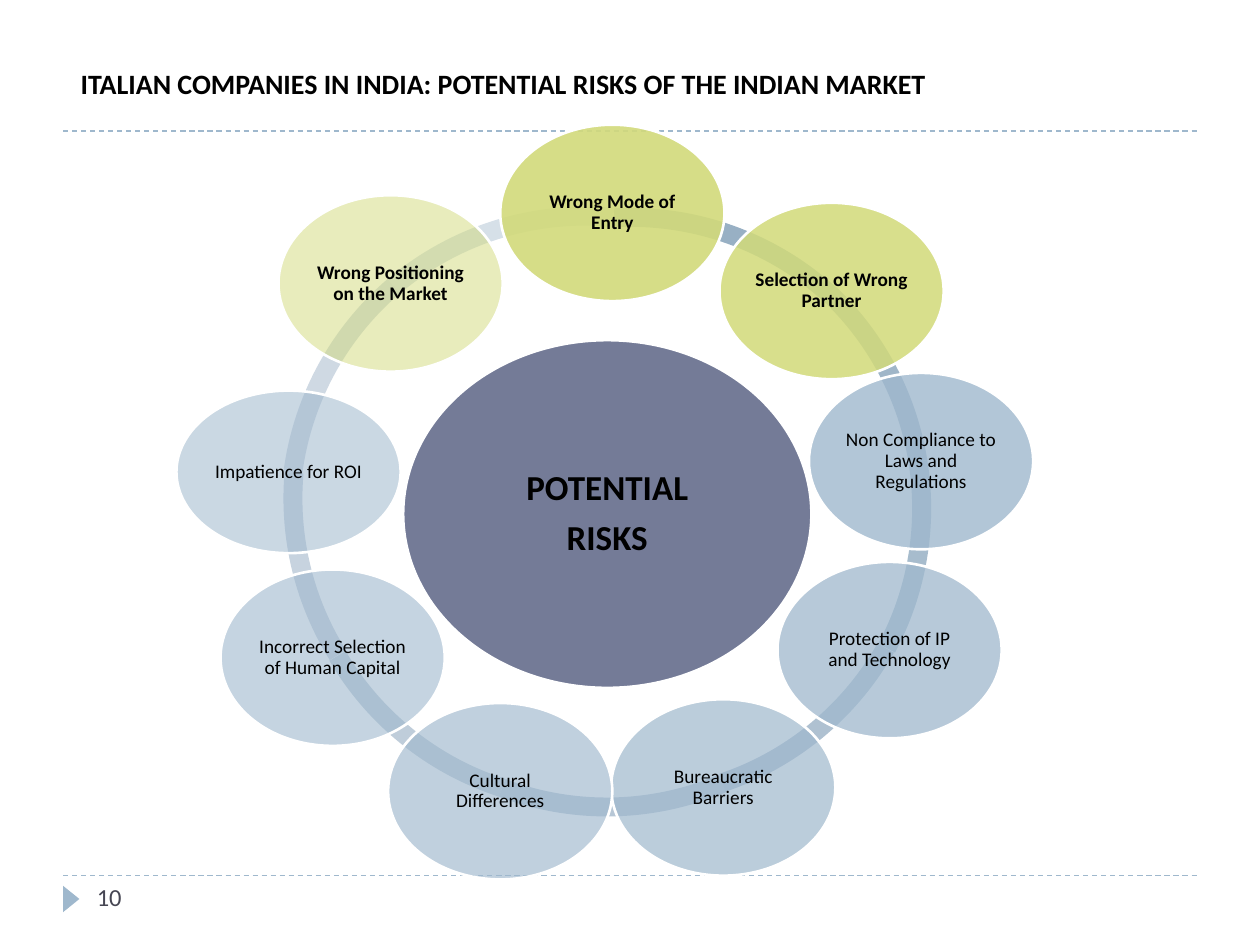
from lxml.etree import SubElement
from pptx import Presentation
from pptx.dml.color import RGBColor
from pptx.enum.dml import MSO_LINE
from pptx.enum.shapes import MSO_CONNECTOR, MSO_SHAPE
from pptx.enum.text import MSO_ANCHOR, MSO_AUTO_SIZE, PP_ALIGN
from pptx.oxml.ns import qn
from pptx.util import Inches, Pt

BLUE = RGBColor(0x9F, 0xB8, 0xCD)
LIME = RGBColor(0xD2, 0xDA, 0x7A)
SLATE = RGBColor(0x52, 0x5B, 0x7E)
GREY = RGBColor(0x46, 0x46, 0x53)
BLACK = RGBColor(0, 0, 0)
WHITE = RGBColor(0xFF, 0xFF, 0xFF)

FONT = "Calibri"
RING_SIZE, RING_THICKNESS = 4.85, 0.031
RISK_WIDTH, RISK_HEIGHT = 1.78, 1.4

# Ring pieces: left, top, start, end (adjustment units), colour
RING = [
    (2.22, 1.64, 137.83, 165.15, "D6E0E8"),
    (2.23, 1.63, 112.44, 137.64, "CFD9E3"),
    (2.25, 1.53, 88.81, 110.97, "C7D3DF"),
    (2.28, 1.59, 64.70, 89.74, "BFCDDA"),
    (2.39, 1.63, 40.18, 66.40, "B7C7D6"),
    (2.56, 1.56, 17.73, 42.86, "AFC1D1"),
    (2.54, 1.61, 210.54, 16.89, "A7BCCD"),
    (2.54, 1.61, 188.10, 210.54, "A0B6C8"),
    (2.58, 1.65, 160.08, 187.30, "98B0C4"),
]

# Risks: text, left, top, height, colour, opacity in percent
RISKS = [
    ("Wrong Mode of Entry", 3.97, 0.99, RISK_HEIGHT, LIME, 90),
    ("Selection of Wrong Partner", 5.71, 1.61, RISK_HEIGHT, LIME, 86),
    ("Non Compliance to Laws and Regulations", 6.42, 2.96, RISK_HEIGHT, BLUE, 80),
    ("Protection of IP and Technology", 6.17, 4.46, RISK_HEIGHT, BLUE, 75),
    ("Bureaucratic Barriers", 4.85, 5.55, RISK_HEIGHT, BLUE, 70),
    ("Cultural Differences", 3.08, 5.58, RISK_HEIGHT, BLUE, 65),
    ("Incorrect Selection of Human Capital", 1.75, 4.52, RISK_HEIGHT, BLUE, 60),
    ("Impatience for ROI", 1.4, 3.1, 1.29, BLUE, 55),
    ("Wrong Positioning on the Market", 2.21, 1.55, RISK_HEIGHT, LIME, 50),
]


def add_span(para, text, size, color=BLACK, bold=False):
    span = para.add_run()
    span.text = text
    span.font.name = FONT
    span.font.size = Pt(size)
    span.font.bold = bold
    span.font.color.rgb = color


def add_shape(page, kind, left, top, width, height, color):
    shape = page.shapes.add_shape(
        kind, Inches(left), Inches(top), Inches(width), Inches(height))
    shape.shadow.inherit = False
    shape.fill.solid()
    shape.fill.fore_color.rgb = color
    shape.line.fill.background()
    return shape


def add_rule(page, top):
    rule = page.shapes.add_connector(
        MSO_CONNECTOR.STRAIGHT, Inches(0.5), Inches(top), Inches(9.5), Inches(top))
    rule.line.color.rgb = BLUE
    rule.line.width = Pt(0.75)
    rule.line.dash_style = MSO_LINE.DASH
    SubElement(rule._element.spPr, qn("a:effectLst"))


def add_arc(page, left, top, start, end, color):
    arc = add_shape(page, MSO_SHAPE.BLOCK_ARC, left, top, RING_SIZE, RING_SIZE,
                    RGBColor.from_string(color))
    for index, value in enumerate((start, end, RING_THICKNESS)):
        arc.adjustments[index] = value


def add_bubble(page, lines, left, top, width, height, color, opacity, size, bold):
    bubble = add_shape(page, MSO_SHAPE.OVAL, left, top, width, height, color)
    tint = bubble._element.spPr.find(qn("a:solidFill"))[0]
    SubElement(tint, qn("a:alpha"), val=str(opacity * 1000))
    bubble.line.color.rgb = WHITE
    bubble.line.width = Pt(1.5)

    frame = bubble.text_frame
    frame.word_wrap = True
    frame.vertical_anchor = MSO_ANCHOR.MIDDLE
    frame.margin_left = frame.margin_right = Inches(0.02)
    frame.margin_top = frame.margin_bottom = Inches(0.02)
    for index, text in enumerate(lines):
        para = frame.add_paragraph() if index else frame.paragraphs[0]
        para.alignment = PP_ALIGN.CENTER
        para.line_spacing = 0.9
        para.space_before = Pt(size * 0.35) if index else Pt(0)
        add_span(para, text, size, bold=bold)


def add_title(page, text):
    title = page.shapes.title
    title.left, title.top = Inches(0.49), Inches(0.09)
    title.width, title.height = Inches(8.77), Inches(1.08)
    frame = title.text_frame
    frame.word_wrap = True
    frame.auto_size = MSO_AUTO_SIZE.NONE
    frame.vertical_anchor = MSO_ANCHOR.MIDDLE
    frame.margin_left = Inches(0.15)
    para = frame.paragraphs[0]
    para.alignment = PP_ALIGN.LEFT
    para.line_spacing = Pt(24)
    add_span(para, text, 16, bold=True)


def add_footer(page, number):
    marker = add_shape(page, MSO_SHAPE.ISOSCELES_TRIANGLE, 0.46, 7.07, 0.21, 0.13, BLUE)
    marker.rotation = 90
    box = page.shapes.add_textbox(Inches(0.67), Inches(6.95), Inches(2.17), Inches(0.4))
    box.text_frame.word_wrap = True
    add_span(box.text_frame.paragraphs[0], number, 14, GREY)


def main():
    deck = Presentation()
    deck.slide_width, deck.slide_height = Inches(10), Inches(7.5)
    page = deck.slides.add_slide(deck.slide_layouts[5])

    # Frame of the page
    add_title(page, "ITALIAN COMPANIES IN INDIA: POTENTIAL RISKS OF THE INDIAN MARKET")
    for top in (6.95, 1.04):
        add_rule(page, top)
    add_footer(page, "10")

    # Ring, centre and surrounding risks
    for piece in RING:
        add_arc(page, *piece)
    add_bubble(page, ["POTENTIAL", "RISKS"], 3.2, 2.7, 3.24, 2.76, SLATE, 80, 20, True)
    for text, left, top, height, color, opacity in RISKS:
        add_bubble(page, [text], left, top, RISK_WIDTH, height, color, opacity,
                   11, color == LIME)

    deck.save("out.pptx")


if __name__ == "__main__":
    main()
